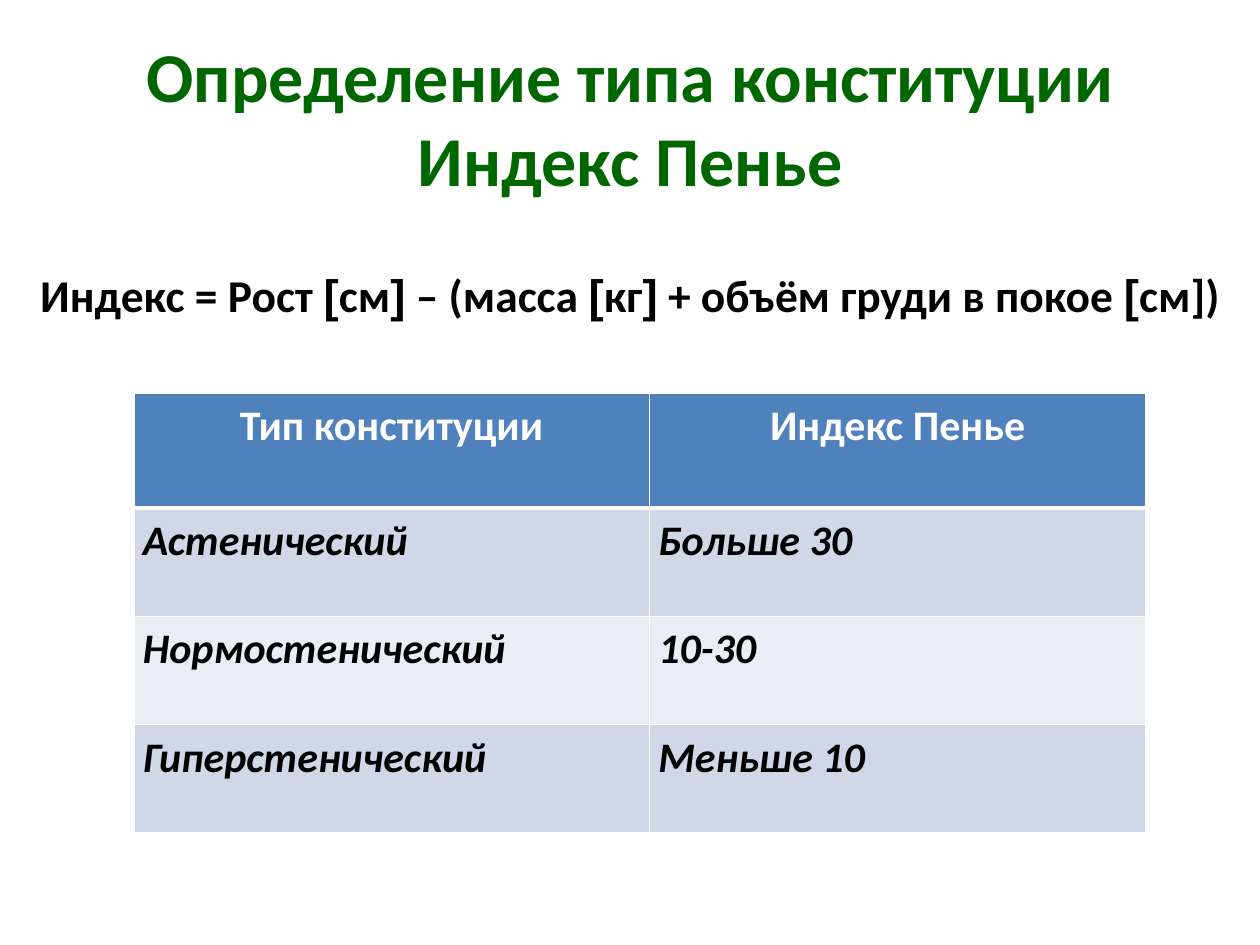
from dataclasses import dataclass

import pptx
import pptx.dml.color
import pptx.enum.text
import pptx.oxml
import pptx.oxml.ns
import pptx.util

Cm = pptx.util.Cm
Pt = pptx.util.Pt
ALIGN = pptx.enum.text.PP_ALIGN
MIDDLE = pptx.enum.text.MSO_ANCHOR.MIDDLE


@dataclass(frozen=True)
class Theme:
    font: str = "Calibri"
    bracket_font: str = "Arial"
    title: str = "006600"
    text: str = "000000"
    white: str = "FFFFFF"
    header: str = "4F81BD"
    bands: tuple = ("D0D8E8", "E9EDF4")
    title_size: int = 40
    formula_size: int = 26
    table_size: int = 24


THEME = Theme()

TITLE = "Определение типа конституции\vИндекс Пенье"
FORMULA = ["Индекс = Рост ", "[", "см", "]", " – (масса ", "[", "кг", "]",
           " + объём груди в покое ", "[", "см])"]
ROWS = [
    ("Тип конституции", "Индекс Пенье"),
    ("Астенический", "Больше 30"),
    ("Нормостенический", "10-30"),
    ("Гиперстенический", "Меньше 10"),
]


def set_all(obj, values):
    for name, value in values.items():
        setattr(obj, name, value)


def format_font(font, color, size, name=THEME.font, italic=False):
    set_all(font, {"name": name, "size": Pt(size), "bold": True, "italic": italic})
    font.color.rgb = pptx.dml.color.RGBColor.from_string(color)


def add_title(s, left, top, width, height):
    sp = s.shapes.title
    set_all(sp, {"left": left, "top": top, "width": width, "height": height})
    tf = sp.text_frame
    set_all(tf, {"word_wrap": True, "vertical_anchor": MIDDLE})
    p = tf.paragraphs[0]
    p.text = TITLE
    p.alignment = ALIGN.CENTER
    for r in p.runs:
        format_font(r.font, THEME.title, THEME.title_size)


def add_formula(s, left, top, width, height):
    tf = s.shapes.add_textbox(left, top, width, height).text_frame
    set_all(tf, {"word_wrap": True, "vertical_anchor": MIDDLE})
    p = tf.paragraphs[0]
    p.alignment = ALIGN.CENTER
    for part in FORMULA:
        r = p.add_run()
        r.text = part
        name = THEME.bracket_font if part in "[]" else THEME.font
        format_font(r.font, THEME.text, THEME.formula_size, name)


def add_borders(cell, widths):
    """Draw white borders, with widths in points keyed by side (L, R, T, B)."""
    for side, width in widths.items():
        cell._tc.get_or_add_tcPr().append(pptx.oxml.parse_xml(
            f'<a:ln{side} {pptx.oxml.ns.nsdecls("a")} w="{Pt(width)}">'
            f'<a:solidFill><a:srgbClr val="{THEME.white}"/></a:solidFill></a:ln{side}>'))


def format_cell(cell, text, row):
    is_header = row == 0
    set_all(cell, {"margin_left": Cm(0.18), "margin_right": Cm(0.18),
                   "margin_top": 0, "margin_bottom": 0})
    add_borders(cell, {"L": 1, "R": 1, "T": 3 if row == 1 else 1,
                       "B": 3 if is_header else 1})
    fill = THEME.header if is_header else THEME.bands[(row - 1) % 2]
    cell.fill.solid()
    cell.fill.fore_color.rgb = pptx.dml.color.RGBColor.from_string(fill)
    p = cell.text_frame.paragraphs[0]
    set_all(p, {"alignment": ALIGN.CENTER if is_header else ALIGN.LEFT,
                "line_spacing": 1.15})
    r = p.add_run()
    r.text = text
    format_font(r.font, THEME.white if is_header else THEME.text,
                THEME.table_size, italic=not is_header)


def add_index_table(s, left, top, width, height):
    table = s.shapes.add_table(len(ROWS), 2, left, top, width, height).table
    table.columns[0].width = Cm(10.39)
    table.columns[1].width = width - Cm(10.39)
    header_height = Cm(2.31)
    body_height = (height - header_height) // (len(ROWS) - 1)
    for i, texts in enumerate(ROWS):
        table.rows[i].height = body_height if i else header_height
        for j, text in enumerate(texts):
            format_cell(table.cell(i, j), text, i)


def main():
    prs = pptx.Presentation()
    set_all(prs, {"slide_width": Cm(25.4), "slide_height": Cm(19.05)})
    s = prs.slides.add_slide(prs.slide_layouts[5])
    add_title(s, Cm(1.27), Cm(0.76), Cm(22.86), Cm(3.18))
    add_index_table(s, Cm(2.7), Cm(7.93), Cm(20.4), Cm(8.86))
    add_formula(s, Cm(0.5), Cm(4.93), Cm(24.4), Cm(2))
    prs.save("out.pptx")


if __name__ == "__main__":
    main()
